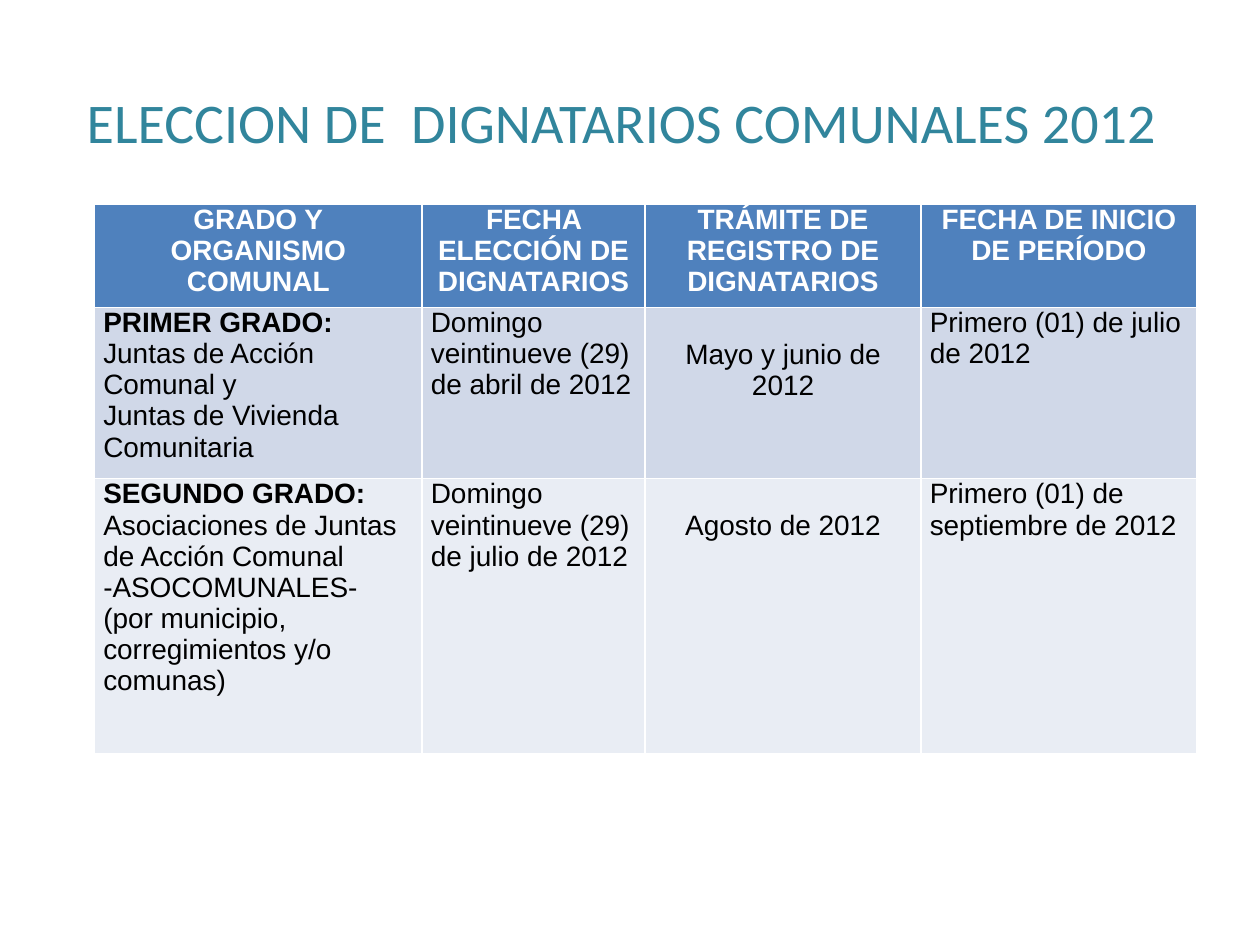
from typing import NamedTuple

from pptx import Presentation
from pptx.dml.color import RGBColor
from pptx.enum.text import MSO_ANCHOR, PP_ALIGN as Align
from pptx.util import Inches, Pt

WHITE = RGBColor(0xFF, 0xFF, 0xFF)
BLACK = RGBColor(0x00, 0x00, 0x00)
TEAL = RGBColor(0x31, 0x85, 0x9C)
HEADER_BLUE = RGBColor(0x4F, 0x81, 0xBD)
BAND_DARK = RGBColor(0xD0, 0xD8, 0xE8)
BAND_LIGHT = RGBColor(0xE9, 0xED, 0xF4)

SLIDE_WIDTH, SLIDE_HEIGHT = Inches(10), Inches(7.5)
COLUMN_SHARES = (0.26, 0.177, 0.219, 0.219)
PROCEDURE_COLUMN = 2
LINE_HEIGHT = Inches(0.25)


class TableRow(NamedTuple):
    height: float  # inches
    fill: RGBColor
    color: RGBColor
    cells: tuple[str, ...]


ROWS = (
    TableRow(0.82, HEADER_BLUE, WHITE, (
        "GRADO Y\nORGANISMO COMUNAL",
        "FECHA ELECCIÓN DE DIGNATARIOS",
        "TRÁMITE DE REGISTRO DE DIGNATARIOS",
        "FECHA DE INICIO DE PERÍODO",
    )),
    TableRow(1.36, BAND_DARK, BLACK, (
        "PRIMER GRADO:\nJuntas de Acción Comunal y\nJuntas de Vivienda Comunitaria",
        "Domingo veintinueve (29) de abril de 2012",
        "Mayo y junio de 2012",
        "Primero (01) de julio de 2012",
    )),
    TableRow(2.18, BAND_LIGHT, BLACK, (
        "SEGUNDO GRADO:\nAsociaciones de Juntas de Acción Comunal -ASOCOMUNALES- "
        "(por municipio, corregimientos y/o comunas)",
        "Domingo veintinueve (29) de julio de 2012",
        "Agosto de 2012",
        "Primero (01) de septiembre de 2012",
    )),
)


def add_title(slide) -> None:
    title = slide.shapes.title
    title.left, title.top = int(SLIDE_WIDTH * 0.025), int(SLIDE_HEIGHT * 0.04)
    title.width, title.height = int(SLIDE_WIDTH * 0.937), int(SLIDE_HEIGHT * 0.176)
    title.text_frame.text = "ELECCION DE  DIGNATARIOS COMUNALES 2012"
    title.text_frame.vertical_anchor = MSO_ANCHOR.MIDDLE
    heading = title.text_frame.paragraphs[0]
    heading.alignment = Align.CENTER
    font = heading.runs[0].font
    font.name, font.size, font.color.rgb = "Calibri", Pt(32), TEAL


def fill_cell(cell, text: str, row: TableRow, column: int) -> None:
    is_header = row is ROWS[0]
    is_procedure = column == PROCEDURE_COLUMN
    cell.fill.solid()
    cell.fill.fore_color.rgb = row.fill
    cell.margin_left = cell.margin_right = Inches(0.07)
    cell.margin_top = LINE_HEIGHT if is_procedure and not is_header else 0
    cell.margin_bottom = 0
    cell.text_frame.text = text
    for index, paragraph in enumerate(cell.text_frame.paragraphs):
        paragraph.alignment = Align.CENTER if is_header or is_procedure else Align.LEFT
        font = paragraph.runs[0].font
        font.name, font.size, font.color.rgb = "Arial", Pt(16), row.color
        font.bold = is_header or (column == 0 and index == 0)


def add_election_table(slide) -> None:
    table = slide.shapes.add_table(
        len(ROWS), len(COLUMN_SHARES),
        int(SLIDE_WIDTH * 0.075), int(SLIDE_HEIGHT * 0.216),
        int(SLIDE_WIDTH * sum(COLUMN_SHARES)), Inches(sum(row.height for row in ROWS)),
    ).table
    for column, share in zip(table.columns, COLUMN_SHARES):
        column.width = int(SLIDE_WIDTH * share)
    for row_index, row in enumerate(ROWS):
        table.rows[row_index].height = Inches(row.height)
        for column_index, text in enumerate(row.cells):
            fill_cell(table.cell(row_index, column_index), text, row, column_index)


def main() -> None:
    presentation = Presentation()
    presentation.slide_width, presentation.slide_height = SLIDE_WIDTH, SLIDE_HEIGHT
    slide = presentation.slides.add_slide(
        presentation.slide_layouts.get_by_name("Title Only"))
    add_title(slide)
    add_election_table(slide)
    presentation.save("out.pptx")


if __name__ == "__main__":
    main()
